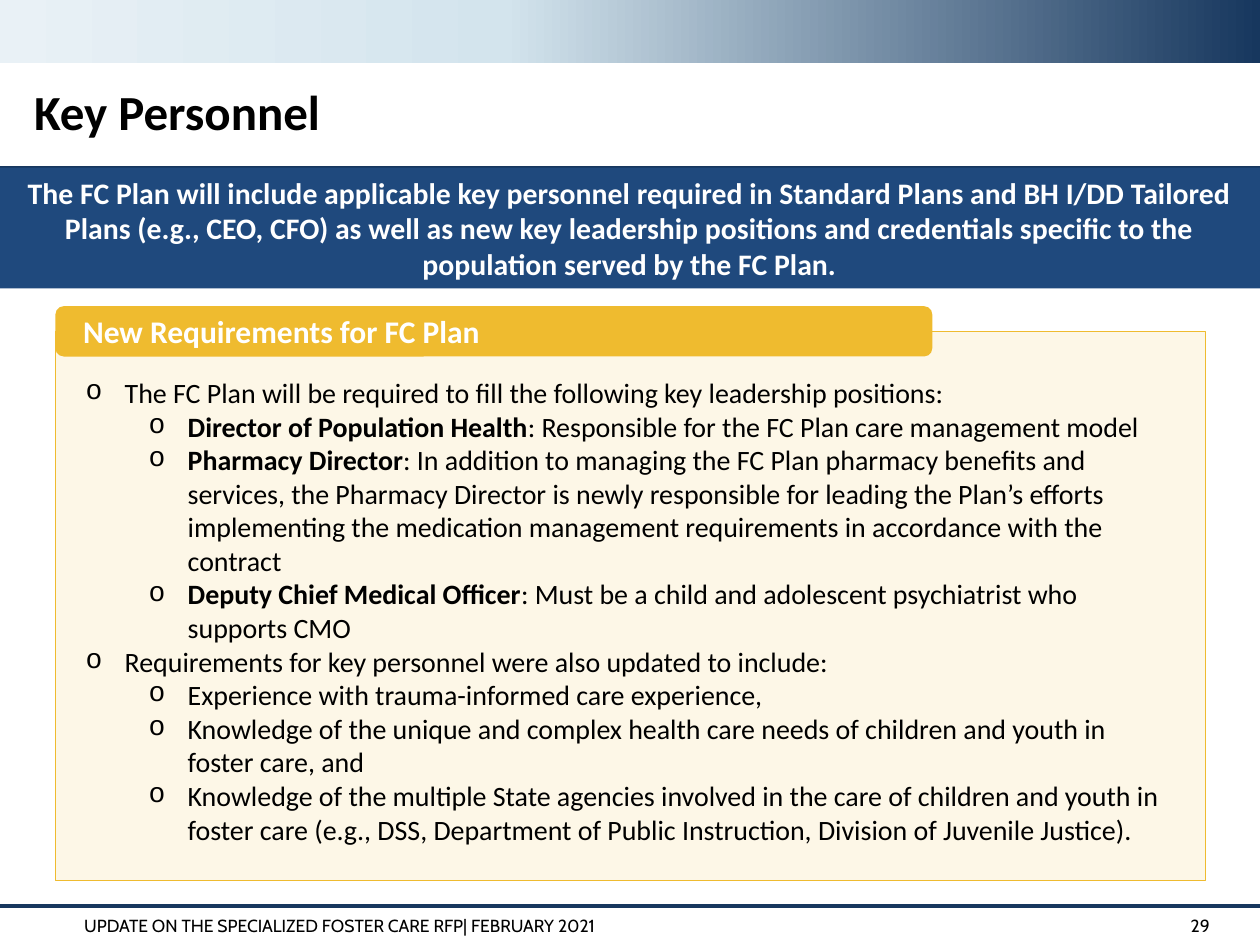
from lxml import etree
from pptx import Presentation
from pptx.dml.color import RGBColor
from pptx.enum.shapes import MSO_CONNECTOR, MSO_SHAPE
from pptx.enum.text import MSO_ANCHOR, MSO_AUTO_SIZE, PP_ALIGN
from pptx.oxml import parse_xml
from pptx.oxml.ns import nsdecls, qn
from pptx.util import Inches, Pt

RECT, ROUND = MSO_SHAPE.RECTANGLE, MSO_SHAPE.ROUNDED_RECTANGLE
LINE = MSO_CONNECTOR.STRAIGHT
TOP, MIDDLE = MSO_ANCHOR.TOP, MSO_ANCHOR.MIDDLE
LEFT, CENTER, RIGHT = PP_ALIGN.LEFT, PP_ALIGN.CENTER, PP_ALIGN.RIGHT

NAVY = RGBColor(0x17, 0x37, 0x5E)
BLUE = RGBColor(0x1F, 0x49, 0x7D)
GOLD = RGBColor(0xEF, 0xBB, 0x2F)
CREAM = RGBColor(0xFD, 0xF7, 0xE7)
BLACK = RGBColor(0, 0, 0)
WHITE = RGBColor(255, 255, 255)
FADE = [(0, "17375E"), (60, "D3E4ED"), (100, "E9F1F6")]

# Content
TITLE = "Key Personnel"
BANNER = ("The FC Plan will include applicable key personnel required in "
          "Standard Plans and BH I/DD Tailored Plans (e.g., CEO, CFO) as well "
          "as new key leadership positions and credentials specific to the "
          "population served by the FC Plan.")
HEADING = "New Requirements for FC Plan"
FOOTER = "UPDATE ON THE SPECIALIZED FOSTER CARE RFP| FEBRUARY 2021"
PAGE = "29"
# Each item: level, bold lead, plain text
ITEMS = [
    (0, "", "The FC Plan will be required to fill the following key "
     "leadership positions:"),
    (1, "Director of Population Health",
     ": Responsible for the FC Plan care management model"),
    (1, "Pharmacy Director",
     ": In addition to managing the FC Plan pharmacy benefits and services, "
     "the Pharmacy Director is newly responsible for leading the Plan’s "
     "efforts implementing the medication management requirements in "
     "accordance with the contract"),
    (1, "Deputy Chief Medical Officer",
     ": Must be a child and adolescent psychiatrist who supports CMO"),
    (0, "", "Requirements for key personnel were also updated to include:"),
    (1, "", "Experience with trauma-informed care experience,"),
    (1, "", "Knowledge of the unique and complex health care needs of "
     "children and youth in foster care, and"),
    (1, "", "Knowledge of the multiple State agencies involved in the care of "
     "children and youth in foster care (e.g., DSS, Department of Public "
     "Instruction, Division of Juvenile Justice)."),
]

# Layout, in inches
WIDE, HIGH = 10, 7.5
RULE = 1.33
FOOT = 7.19
EDGE = 0.44
HANG, STEP = 0.31, 0.5

deck = Presentation()
deck.slide_width, deck.slide_height = Inches(WIDE), Inches(HIGH)
slide = deck.slides.add_slide(deck.slide_layouts[1])
shapes = slide.shapes


def place(shape, x, y, w, h):
    shape.left, shape.top = Inches(x), Inches(y)
    shape.width, shape.height = Inches(w), Inches(h)


def add_run(para, text, size, color=BLACK, bold=False, face="Calibri"):
    run = para.add_run()
    run.text = text
    font = run.font
    font.name, font.size, font.bold = face, Pt(size), bold
    font.color.rgb = color


def set_frame(shape, anchor=MIDDLE, align=LEFT):
    frame = shape.text_frame
    frame.word_wrap = True
    frame.auto_size = MSO_AUTO_SIZE.NONE
    frame.vertical_anchor = anchor
    para = frame.paragraphs[0]
    para.alignment = align
    return para


def add_box(kind, x, y, w, h, fill=None, edge=None):
    box = shapes.add_shape(kind, *map(Inches, (x, y, w, h)))
    box.shadow.inherit = False
    if fill is not None:
        box.fill.solid()
        box.fill.fore_color.rgb = fill
    if edge is None:
        box.line.fill.background()
    else:
        box.line.color.rgb = edge
        box.line.width = Pt(0.75)
    return box


def add_rule(y, width):
    rule = shapes.add_connector(LINE, 0, Inches(y), Inches(WIDE), Inches(y))
    rule.line.color.rgb = NAVY
    rule.line.width = Pt(width)
    etree.SubElement(rule._element.spPr, qn("a:effectLst"))


def add_note(text, x, w, align):
    note = shapes.add_textbox(*map(Inches, (x, FOOT, w, HIGH - FOOT)))
    add_run(set_frame(note, align=align), text, 10, face="Cabin")


def add_bullet(para, level):
    props = para._p.get_or_add_pPr()
    props.set("marL", str(Inches(HANG + level * STEP)))
    props.set("indent", str(-Inches(HANG)))
    etree.SubElement(props, qn("a:buFont")).set("typeface", "Courier New")
    etree.SubElement(props, qn("a:buChar")).set("char", "o")


# Top band, fading from right to left
band = add_box(RECT, 0, 0, WIDE, 0.5)
stops = "".join(f'<a:gs pos="{pos * 1000}"><a:srgbClr val="{hue}"/></a:gs>'
                for pos, hue in FADE)
band._element.spPr.find(qn("a:prstGeom")).addnext(parse_xml(
    f'<a:gradFill {nsdecls("a")} rotWithShape="1"><a:gsLst>{stops}</a:gsLst>'
    '<a:lin ang="10800000" scaled="0"/></a:gradFill>'))

# Title
title = shapes.title
place(title, 0.17, 0.6, 9.85, 0.63)
para = set_frame(title, TOP)
para.space_after = Pt(12)
add_run(para, TITLE, 28, bold=True)

# Rules and banner
add_rule(FOOT, 2.25)
add_rule(RULE, 1.5)
banner = add_box(RECT, 0, RULE, WIDE, 0.96, BLUE)
# The banner text is centred a touch to the left
banner.left = Inches(-0.01)
banner.width = Inches(WIDE + 0.01)
add_run(set_frame(banner, align=CENTER), BANNER, 17, WHITE, True)

# Panel, then the list brought in front of it
add_box(RECT, EDGE, 2.63, 9.13, 4.36, CREAM, GOLD)
body = slide.placeholders[1]
shapes._spTree.append(body._element)
place(body, 0.58, 2.93, 8.82, 4.14)
para = set_frame(body, TOP)
for spot, (level, lead, text) in enumerate(ITEMS):
    if spot:
        para = body.text_frame.add_paragraph()
    para.level = level
    para.space_before = Pt(0)
    add_bullet(para, level)
    if lead:
        add_run(para, lead, 16, bold=True)
    add_run(para, text, 16)

# Panel heading
tab = add_box(ROUND, EDGE, 2.43, 6.96, 0.4, GOLD)
para = set_frame(tab)
frame = tab.text_frame
frame.margin_left = frame.margin_right = Inches(0.2)
frame.margin_top = frame.margin_bottom = 0
add_run(para, HEADING, 18, WHITE, True)

# Footer
add_note(FOOTER, 0.57, 8.4, LEFT)
add_note(PAGE, 9.08, 0.62, RIGHT)

deck.save("out.pptx")
